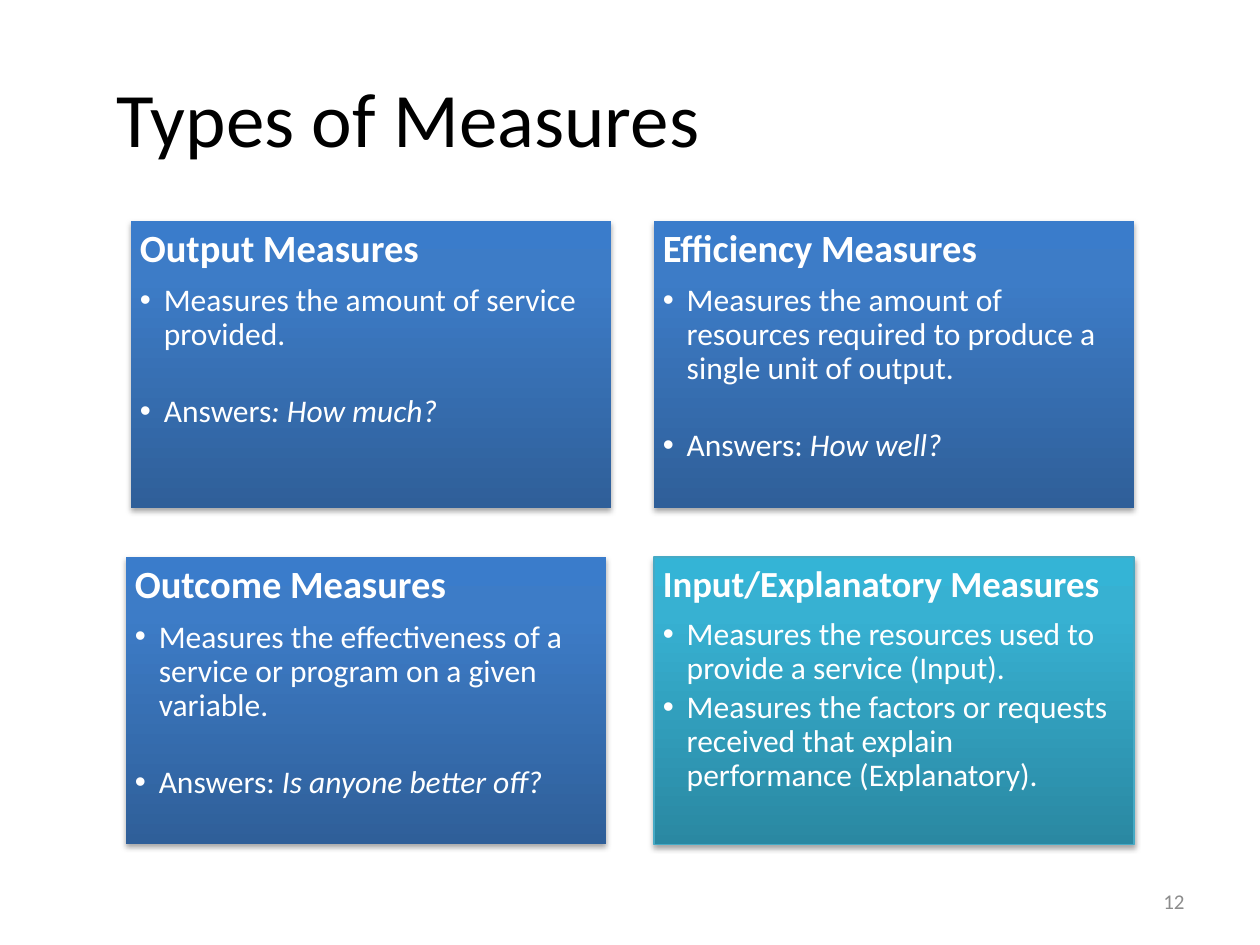
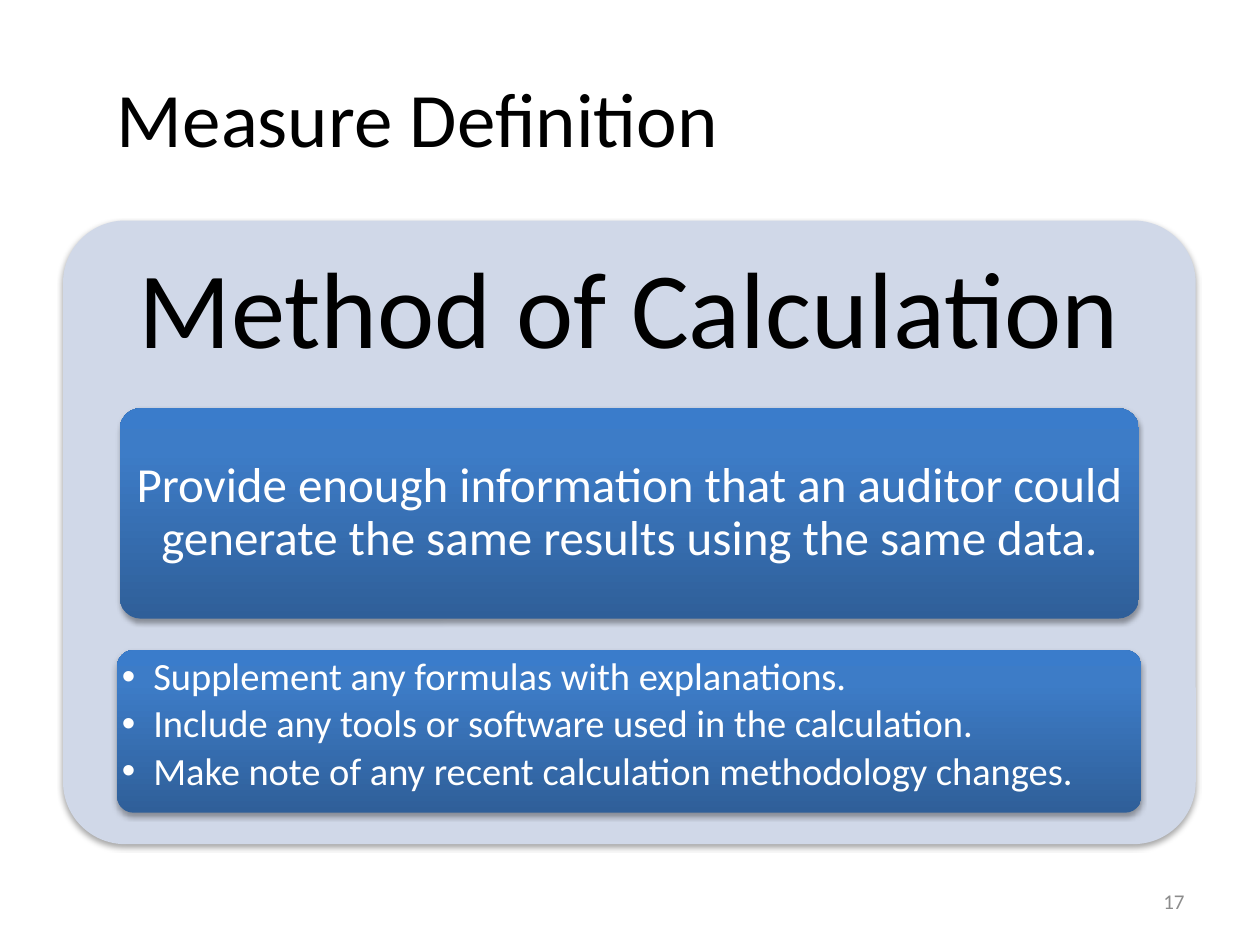
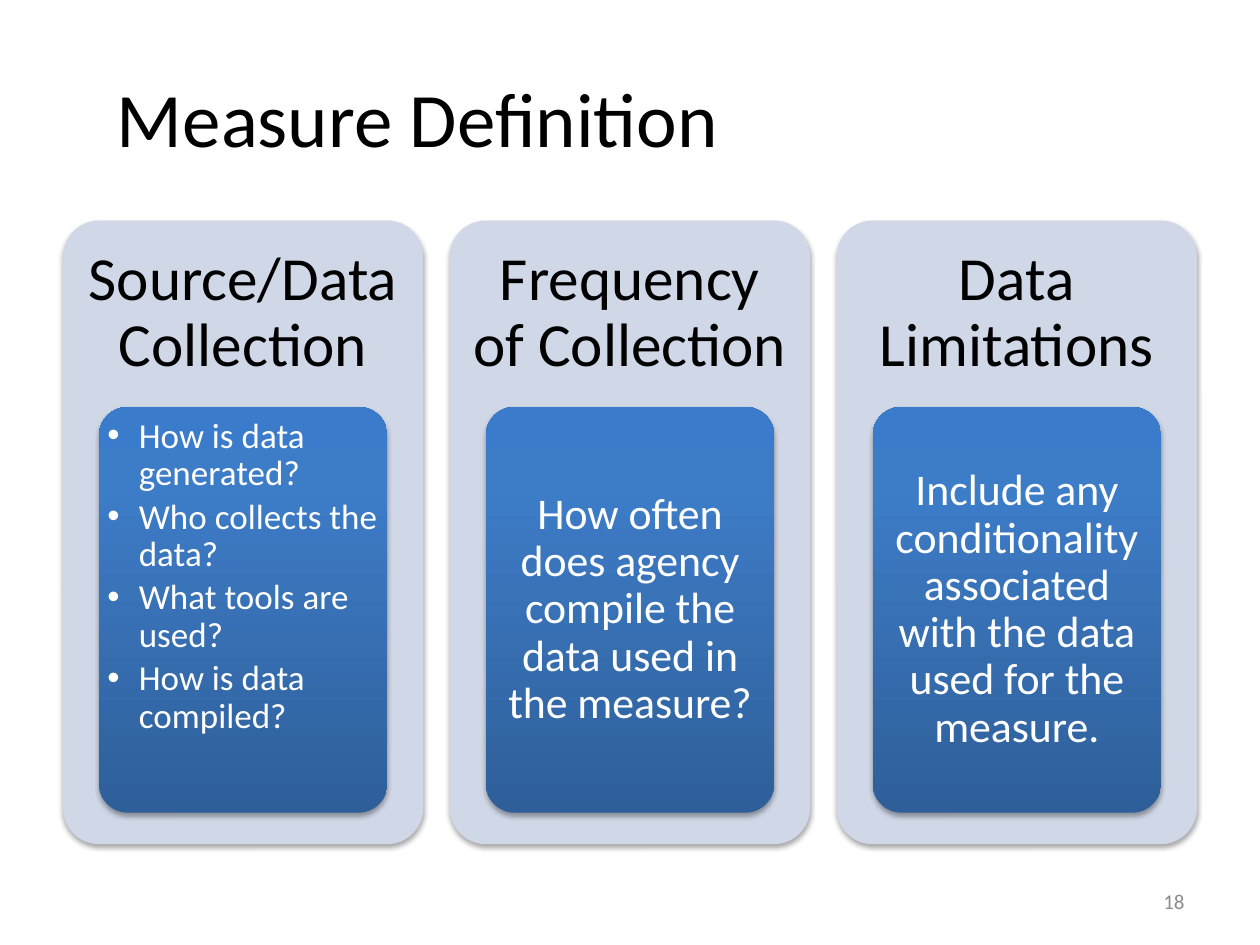
from copy import deepcopy

from lxml.etree import SubElement
from pptx import Presentation
from pptx.dml.color import RGBColor
from pptx.enum.shapes import MSO_SHAPE as Shape
from pptx.enum.text import MSO_ANCHOR as Anchor, PP_ALIGN as Align
from pptx.oxml.ns import qn
from pptx.util import Inches, Pt

FONT = "Calibri"
BLACK = RGBColor(0x00, 0x00, 0x00)
WHITE = RGBColor(0xFF, 0xFF, 0xFF)
GREY = RGBColor(0x8C, 0x8C, 0x8C)
PALE = RGBColor(0xD0, 0xD8, 0xE8)
EDGE = RGBColor(0x46, 0xAA, 0xC5)
BLUE = (RGBColor(0x2F, 0x5F, 0x99), RGBColor(0x3D, 0x7C, 0xC7), RGBColor(0x3A, 0x7C, 0xCB))
TEAL = (RGBColor(0x2A, 0x88, 0xA2), RGBColor(0x37, 0xB1, 0xD2), RGBColor(0x34, 0xB4, 0xD6))
STOPS = (0, 0.8, 1)

# Left, top, heading, heading size, points, question (plain run, italic run)
TYPES = [
    (1.04, 1.75, "Output Measures", 22,
     ["Measures the amount of service provided."],
     ("Answers", ": How much?")),
    (5.19, 1.75, "Efficiency Measures", 22,
     ["Measures the amount of resources required to produce a single unit of output."],
     ("Answers: ", "How well?")),
    (1, 4.42, "Outcome Measures", 22,
     ["Measures the effectiveness of a service or program on a given variable."],
     ("Answers: ", "Is anyone better off?")),
    (5.19, 4.42, "Input/Explanatory Measures", 21,
     ["Measures the resources used to provide a service (Input).",
      "Measures the factors or requests received that explain performance (Explanatory)."],
     None),
]
METHOD = "Method of Calculation"
AUDIT = "Provide enough information that an auditor could generate the same results using the same data."
TIPS = [
    "Supplement any formulas with explanations.",
    "Include any tools or software used in the calculation.",
    "Make note of any recent calculation methodology changes.",
]
# A list is set as bullets, a string as centred text
COLUMNS = [
    ("Source/Data Collection",
     ["How is data generated?", "Who collects the data?",
      "What tools are used?", "How is data compiled?"]),
    ("Frequency of Collection",
     "How often does agency compile the data used in the measure?"),
    ("Data Limitations",
     "Include any conditionality associated with the data used for the measure."),
]


def setup(frame, inset, anchor):
    frame.word_wrap = True
    frame.vertical_anchor = anchor
    frame.margin_left = frame.margin_right = Inches(inset[0])
    frame.margin_top = frame.margin_bottom = Inches(inset[1])
    return frame


def write(frame, runs, size, color=WHITE, bold=False, align=Align.LEFT,
          indent=0, before=0, after=0.35, pitch=0.9):
    """Add one paragraph; runs are plain and italic by turns, after is a share of size."""
    para = frame.paragraphs[0]
    if para.runs:
        para = frame.add_paragraph()
    if indent:
        props = para._p.get_or_add_pPr()
        props.set("marL", str(Inches(indent)))
        props.set("indent", str(-Inches(indent)))
        SubElement(props, qn("a:buFont"), typeface="Arial")
        SubElement(props, qn("a:buChar"), char="•")
    para.alignment = align
    para.line_spacing = pitch
    para.space_before = Pt(before)
    para.space_after = Pt(after * size)
    for i, text in enumerate(runs):
        run = para.add_run()
        run.text = text
        font = run.font
        font.name, font.size, font.bold = FONT, Pt(size), bold
        font.italic = i % 2 == 1
        font.color.rgb = color


def bullets(frame, items, size, indent):
    for item in items:
        write(frame, [item], size, indent=indent, after=0.15)


def label(slide, box, inset=(0.1, 0.05)):
    frame = slide.shapes.add_textbox(*map(Inches, box)).text_frame
    return setup(frame, inset, Anchor.MIDDLE)


def card(slide, kind, box, paint, edge=None):
    """Add a shadowed shape, filled with one colour or a tuple of gradient colours."""
    shape = slide.shapes.add_shape(kind, *map(Inches, box))
    if kind == Shape.ROUNDED_RECTANGLE:
        shape.adjustments[0] = 0.1
    fill = shape.fill
    if isinstance(paint, RGBColor):
        fill.solid()
        fill.fore_color.rgb = paint
    else:
        fill.gradient()
        fill.gradient_angle = 90
        stops = shape._element.spPr.find(".//" + qn("a:gsLst"))
        stops.append(deepcopy(stops[0]))
        for stop, place, color in zip(fill.gradient_stops, STOPS, paint):
            stop.position = place
            stop.color.rgb = color
    if edge:
        shape.line.color.rgb = edge
        shape.line.width = Pt(0.75)
    else:
        shape.line.fill.background()
    shape.shadow.inherit = False
    effects = shape._element.spPr.find(qn("a:effectLst"))
    shade = SubElement(effects, qn("a:outerShdw"), blurRad=str(Pt(3.1)),
                       dist=str(Pt(1.8)), dir="5400000", rotWithShape="0")
    tint = SubElement(shade, qn("a:srgbClr"), val="000000")
    SubElement(tint, qn("a:alpha"), val="35000")
    return shape.text_frame


def panel(slide, left, width, head, size, inset):
    """Add a pale rounded panel with its heading."""
    card(slide, Shape.ROUNDED_RECTANGLE, (left, 1.75, width, 4.95), PALE)
    frame = label(slide, (left, 1.75, width, 1.48), (inset, inset))
    write(frame, [head], size, BLACK, align=Align.CENTER)


def block(slide, box, body, size):
    """Add a blue rounded block holding bullets or centred text."""
    frame = card(slide, Shape.ROUNDED_RECTANGLE, box, BLUE)
    if isinstance(body, list):
        setup(frame, (0, 0.02), Anchor.TOP)
        bullets(frame, body, size, 0.25)
    else:
        setup(frame, (0.07, 0.05), Anchor.MIDDLE)
        write(frame, [body], size, align=Align.CENTER)


def page(deck, title, number):
    slide = deck.slides.add_slide(deck.slide_layouts[6])
    write(label(slide, (0.83, 0.3, 8.67, 1.25)), [title], 44, BLACK, after=0, pitch=1)
    write(label(slide, (7.17, 6.95, 2.33, 0.4)), [number], 12, GREY,
          align=Align.RIGHT, after=0, pitch=1)
    return slide


def types(deck):
    slide = page(deck, "Types of Measures", "12")
    for left, top, head, size, points, answer in TYPES:
        paint, edge = (BLUE, None) if answer else (TEAL, EDGE)
        frame = card(slide, Shape.RECTANGLE, (left, top, 3.81, 2.28), paint, edge)
        setup(frame, (0.07, 0.07), Anchor.TOP)
        write(frame, [head], size, bold=True)
        bullets(frame, points, 18, 0.19)
        if answer:
            write(frame, answer, 18, indent=0.19, before=22, after=0.15)


def method(deck):
    slide = page(deck, "Measure Definition", "17")
    panel(slide, 0.5, 8.99, METHOD, 62, 0.26)
    block(slide, (0.95, 3.24, 8.09, 1.67), AUDIT, 28)
    block(slide, (0.93, 5.16, 8.13, 1.29), TIPS, 22)


def sources(deck):
    slide = page(deck, "Measure Definition", "18")
    width, step, inner = 2.86, 3.07, 2.29
    for i, (head, body) in enumerate(COLUMNS):
        left = 0.5 + i * step
        panel(slide, left, width, head, 35, 0.15)
        size = 20 if isinstance(body, list) else 25
        block(slide, (left + (width - inner) / 2, 3.23, inner, 3.22), body, size)


def main():
    deck = Presentation()
    deck.slide_width, deck.slide_height = Inches(10), Inches(7.5)
    types(deck)
    method(deck)
    sources(deck)
    deck.save("out.pptx")


if __name__ == "__main__":
    main()
